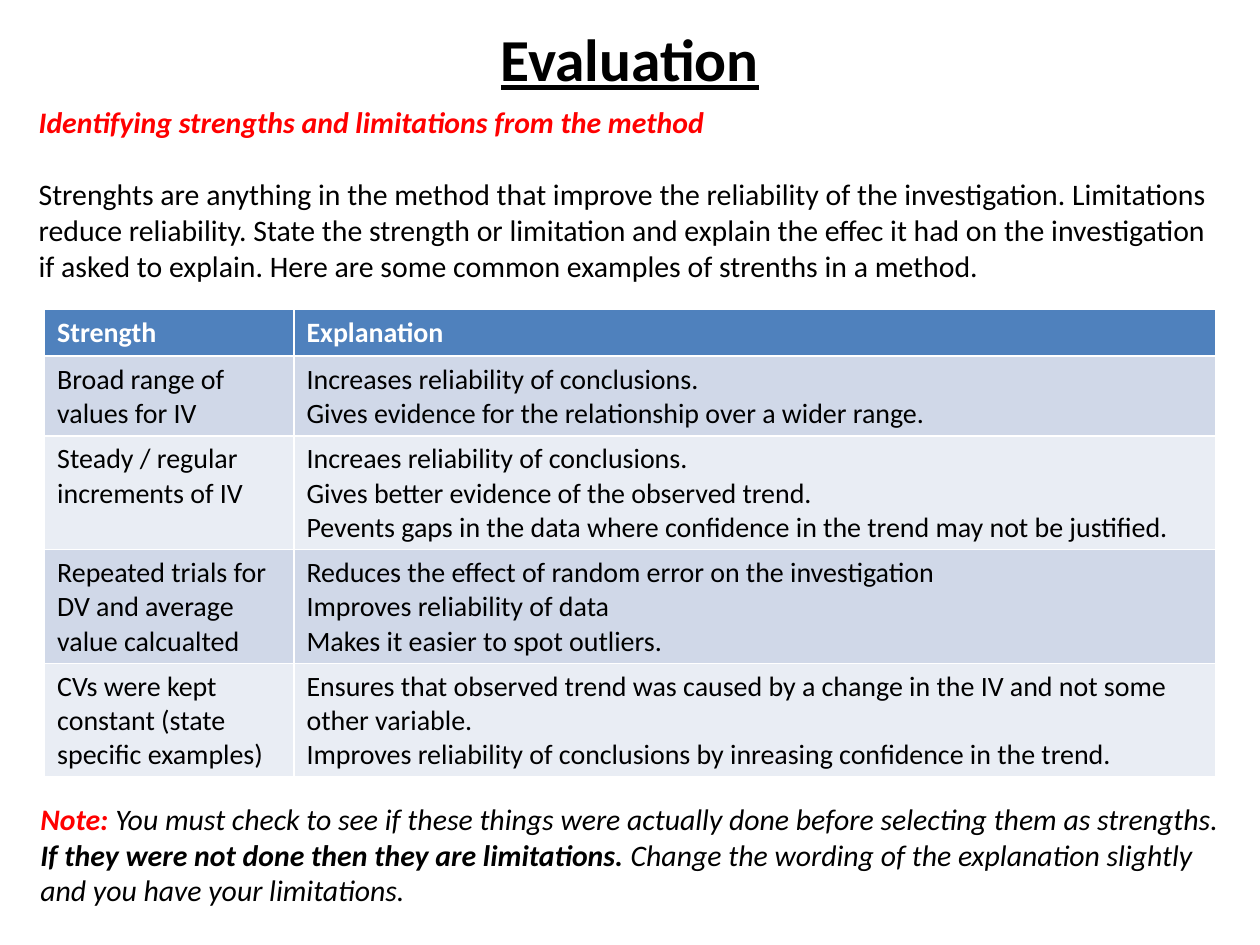
from pptx import Presentation
from pptx.dml.color import RGBColor
from pptx.enum.text import MSO_ANCHOR, PP_ALIGN
from pptx.util import Pt

FONT = "Calibri"
BLACK, WHITE, RED = "000000", "FFFFFF", "FF0000"
HEADER_FILL, BAND_FILLS = "4F81BD", ("D0D8E8", "E9EDF4")

TITLE = "Evaluation"
HEADING = "Identifying strengths and limitations from the method"
INTRO = (
    "Strenghts are anything in the method that improve the reliability of the "
    "investigation. Limitations reduce reliability. State the strength or "
    "limitation and explain the effec it had on the investigation if asked to "
    "explain. Here are some common examples of strenths in a method."
)
# Each row: strength, then its explanations
ROWS = [
    ("Strength", ["Explanation"]),
    ("Broad range of values for IV", [
        "Increases reliability of conclusions.",
        "Gives evidence for the relationship over a wider range."]),
    ("Steady / regular increments of IV", [
        "Increaes reliability of conclusions.",
        "Gives better evidence of the observed trend.",
        "Pevents gaps in the data where confidence in the trend may not be justified."]),
    ("Repeated trials for DV and average value calcualted", [
        "Reduces the effect of random error on the investigation",
        "Improves reliability of data",
        "Makes it easier to spot outliers."]),
    ("CVs were kept constant (state specific examples)", [
        "Ensures that observed trend was caused by a change in the IV and not some other variable.",
        "Improves reliability of conclusions by inreasing confidence in the trend."]),
]
# Each run: text, colour, bold
NOTE = [
    ("Note: ", RED, True),
    ("You must check to see if these things were actually done before selecting "
     "them as strengths. ", BLACK, False),
    ("If they were not done then they are limitations. ", BLACK, True),
    ("Change the wording of the explanation slightly and you have your limitations.",
     BLACK, False),
]
COL_WIDTHS = (142.5, 526.5)
ROW_HEIGHTS = (26.5, 45.5, 65, 65, 65)


def rgb(color):
    return RGBColor.from_string(color)


def style(font, size, color=BLACK, bold=False, italic=False):
    font.name, font.size = FONT, Pt(size)
    font.bold, font.italic = bold, italic
    font.color.rgb = rgb(color)


def add_text_frame(s, *box):
    tf = s.shapes.add_textbox(*map(Pt, box)).text_frame
    tf.word_wrap = True
    return tf


def fill_cell(cell, lines, fill, color, bold):
    cell.fill.solid()
    cell.fill.fore_color.rgb = rgb(fill)
    cell.text = "\n".join(lines)
    for p in cell.text_frame.paragraphs:
        style(p.font, 16, color, bold)


prs = Presentation()
prs.slide_width, prs.slide_height = Pt(720), Pt(540)
s = prs.slides.add_slide(prs.slide_layouts[6])

tf = add_text_frame(s, 36, -12, 648, 90)
tf.vertical_anchor = MSO_ANCHOR.MIDDLE
p = tf.paragraphs[0]
p.text, p.alignment = TITLE, PP_ALIGN.CENTER
style(p.font, 34, bold=True)
p.font.underline = True

tf = add_text_frame(s, 15, 56, 690, 110)
p = tf.paragraphs[0]
p.text, p.space_after = HEADING, Pt(20.7)
style(p.font, 17, RED, bold=True, italic=True)
p = tf.add_paragraph()
p.text = INTRO
style(p.font, 17)

table = s.shapes.add_table(
    len(ROWS), len(COL_WIDTHS), Pt(25.5), Pt(177),
    Pt(sum(COL_WIDTHS)), Pt(sum(ROW_HEIGHTS))).table
for column, width in zip(table.columns, COL_WIDTHS):
    column.width = Pt(width)
for i, (strength, explanations) in enumerate(ROWS):
    table.rows[i].height = Pt(ROW_HEIGHTS[i])
    header = i == 0
    fill = HEADER_FILL if header else BAND_FILLS[(i - 1) % 2]
    for j, lines in enumerate(([strength], explanations)):
        fill_cell(table.cell(i, j), lines, fill, WHITE if header else BLACK, header)

tf = add_text_frame(s, 16, 454, 690, 69)
for text, color, bold in NOTE:
    r = tf.paragraphs[0].add_run()
    r.text = text
    style(r.font, 17, color, bold, italic=True)

prs.save("out.pptx")
